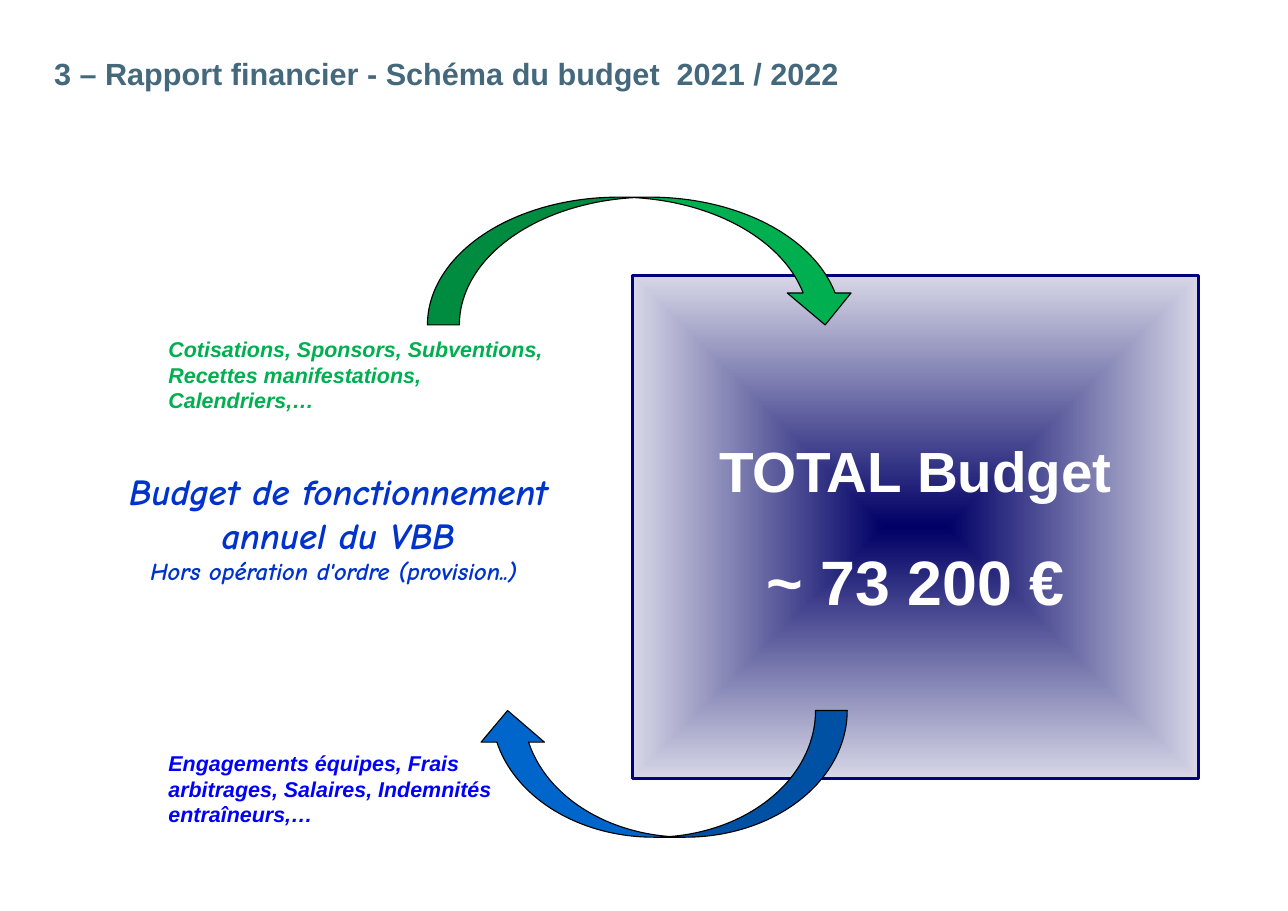
from dataclasses import dataclass

from lxml.etree import SubElement
from pptx import Presentation
from pptx.dml.color import RGBColor
from pptx.enum.shapes import MSO_SHAPE as Preset
from pptx.enum.text import MSO_ANCHOR as Anchor, MSO_AUTO_SIZE as AutoSize, PP_ALIGN as Align
from pptx.oxml.ns import qn
from pptx.util import Inches, Pt

COLORS = {
    "title": "44697D",
    "budget": "0033CC",
    "income": "00B050",
    "expense_text": "0000FF",
    "expense_arrow": "0066CC",
    "total_center": "000066",
    "total_edge": "D7D7E7",
    "total_border": "000080",
    "outline": "000000",
    "total_text": "FFFFFF",
}


@dataclass(frozen=True)
class Box:
    left: float
    top: float
    width: float
    height: float

    def lengths(self) -> tuple:
        return tuple(map(Inches, (self.left, self.top, self.width, self.height)))


@dataclass(frozen=True)
class Line:
    text: str
    size: float
    space_before: float = 0


@dataclass(frozen=True)
class TextStyle:
    color: str
    font: str = "Arial"
    italic: bool = False
    align: Align = Align.LEFT
    anchor: Anchor = Anchor.TOP
    inset_x: float = 0.1
    inset_y: float = 0.05
    auto_size: AutoSize = AutoSize.NONE


@dataclass(frozen=True)
class Label:
    box: Box
    lines: tuple[Line, ...]
    style: TextStyle


@dataclass(frozen=True)
class Arrow:
    box: Box
    preset: Preset
    color: str
    flipped: bool = False


def rgb(name: str) -> RGBColor:
    return RGBColor.from_string(COLORS[name])


def write_lines(frame, lines: tuple[Line, ...], style: TextStyle) -> None:
    frame.word_wrap = True
    frame.auto_size = style.auto_size
    frame.vertical_anchor = style.anchor
    frame.margin_left = frame.margin_right = Inches(style.inset_x)
    frame.margin_top = frame.margin_bottom = Inches(style.inset_y)
    for index, line in enumerate(lines):
        paragraph = frame.add_paragraph() if index else frame.paragraphs[0]
        paragraph.text = line.text
        paragraph.alignment = style.align
        if line.space_before:
            paragraph.space_before = Pt(line.space_before)
        font = paragraph.font
        font.name, font.size = style.font, Pt(line.size)
        font.bold, font.italic = True, style.italic
        font.color.rgb = rgb(style.color)


def add_label(slide, label: Label) -> None:
    shape = slide.shapes.add_textbox(*label.box.lengths())
    write_lines(shape.text_frame, label.lines, label.style)


def add_outlined(slide, preset: Preset, box: Box, line_color: str, line_width: float):
    shape = slide.shapes.add_shape(preset, *box.lengths())
    shape.shadow.inherit = False
    shape.line.color.rgb = rgb(line_color)
    shape.line.width = Pt(line_width)
    return shape


def add_arrow(slide, arrow: Arrow) -> None:
    shape = add_outlined(slide, arrow.preset, arrow.box, "outline", 0.75)
    shape.fill.solid()
    shape.fill.fore_color.rgb = rgb(arrow.color)
    if arrow.flipped:
        shape.element.spPr.find(qn("a:xfrm")).set("flipH", "1")


def add_total(slide, label: Label) -> None:
    shape = add_outlined(slide, Preset.RECTANGLE, label.box, "total_border", 2)
    shape.fill.gradient()
    for stop, color in zip(shape.fill.gradient_stops, ("total_center", "total_edge")):
        stop.color.rgb = rgb(color)
    stops, position = shape.fill.gradient_stops, 0
    for stop, position in zip(stops, (0, 1)):
        stop.position = position
    gradient = shape.element.spPr.find(qn("a:gradFill"))
    gradient.remove(gradient.find(qn("a:lin")))
    path = SubElement(gradient, qn("a:path"), {"path": "shape"})
    SubElement(path, qn("a:fillToRect"), dict.fromkeys("ltrb", "50000"))
    write_lines(shape.text_frame, label.lines, label.style)


def set_title(slide, label: Label) -> None:
    title = slide.shapes.title
    title.left, title.top, title.width, title.height = label.box.lengths()
    write_lines(title.text_frame, label.lines, label.style)
    title.text_frame.paragraphs[0].line_spacing = 0.95


TITLE = Label(
    Box(0.49, 0.18, 11.11, 1.01),
    (Line("3 – Rapport financier - Schéma du budget  2021 / 2022", 20),),
    TextStyle("title", anchor=Anchor.MIDDLE, inset_x=0, inset_y=0),
)
BUDGET = Label(
    Box(0.59, 4.17, 4.96, 1.23),
    (
        Line("Budget de fonctionnement annuel du VBB", 24),
        Line("Hors opération d'ordre (provision..) ", 16),
    ),
    TextStyle("budget", "Comic Neue", True, Align.CENTER, Anchor.MIDDLE, 0.11, 0.06,
              AutoSize.SHAPE_TO_FIT_TEXT),
)
TOTAL = Label(
    Box(5.74, 2.5, 5.14, 4.57),
    (Line("TOTAL Budget", 37), Line("~ 73 200 €", 41, 25.7)),
    TextStyle("total_text", align=Align.CENTER, anchor=Anchor.MIDDLE, inset_x=0.11, inset_y=0.06),
)
FLOWS = (
    (
        Arrow(Box(3.88, 1.79, 3.9, 1.16), Preset.CURVED_DOWN_ARROW, "income"),
        Label(
            Box(1.43, 3, 3.7, 0.81),
            (Line("Cotisations, Sponsors, Subventions, Recettes manifestations, Calendriers,…", 14),),
            TextStyle("income", italic=True, auto_size=AutoSize.SHAPE_TO_FIT_TEXT),
        ),
    ),
    (
        Arrow(Box(4.32, 6.45, 3.37, 1.15), Preset.CURVED_UP_ARROW, "expense_arrow", True),
        Label(
            Box(1.43, 6.76, 3.29, 0.81),
            (Line("Engagements équipes, Frais arbitrages, Salaires, Indemnités entraîneurs,…", 14),),
            TextStyle("expense_text", italic=True, auto_size=AutoSize.SHAPE_TO_FIT_TEXT),
        ),
    ),
)


def main() -> None:
    presentation = Presentation()
    presentation.slide_width, presentation.slide_height = Inches(11.69), Inches(8.27)
    slide = presentation.slides.add_slide(presentation.slide_layouts[5])
    set_title(slide, TITLE)
    add_label(slide, BUDGET)
    add_total(slide, TOTAL)
    for arrow, label in FLOWS:
        add_arrow(slide, arrow)
        add_label(slide, label)
    presentation.save("out.pptx")


if __name__ == "__main__":
    main()
